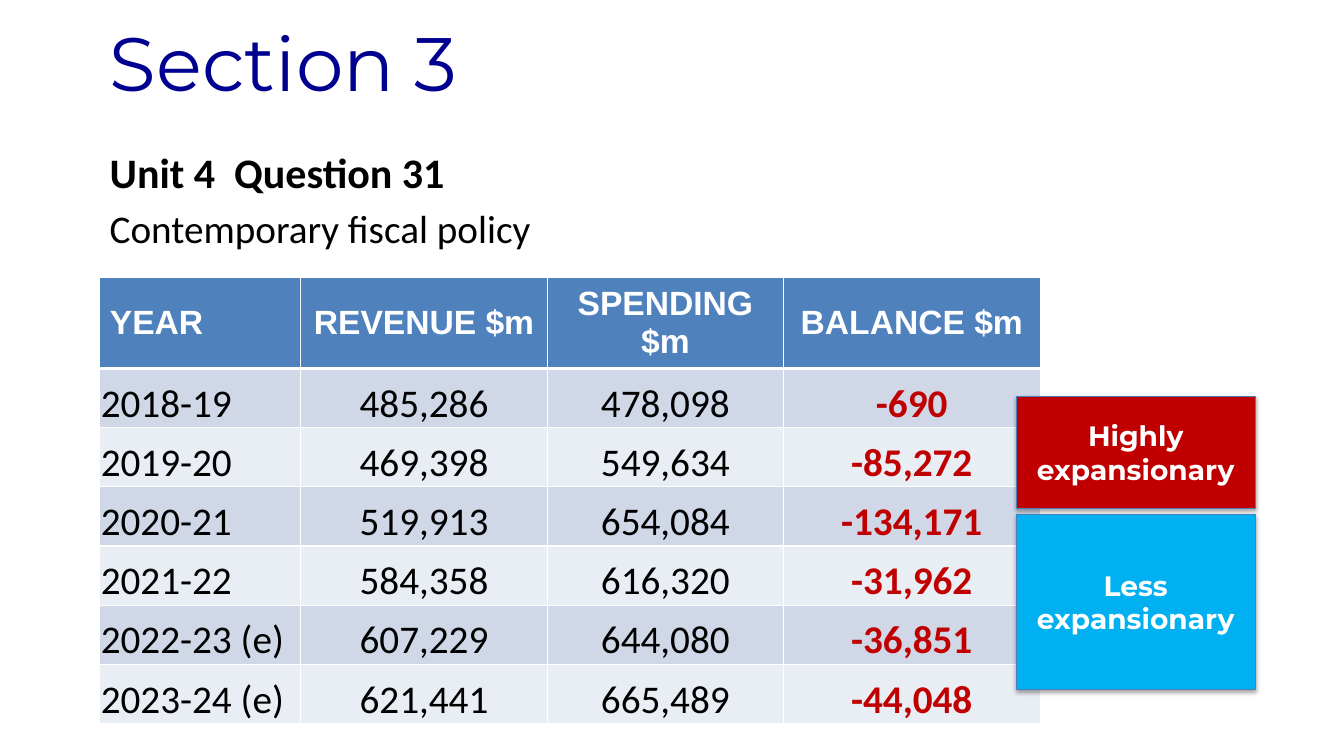
import dataclasses

import lxml.etree
import pptx
import pptx.dml.color
import pptx.enum.shapes
import pptx.enum.text
import pptx.oxml.ns
import pptx.slide
import pptx.table
import pptx.text.text
import pptx.util

Pt = pptx.util.Pt
ALIGN = pptx.enum.text.PP_ALIGN
ANCHOR = pptx.enum.text.MSO_ANCHOR

COLOURS = {
    "navy": "000090",
    "black": "000000",
    "white": "FFFFFF",
    "header": "4F81BD",
    "band_dark": "D0D8E8",
    "band_light": "E9EDF4",
    "red": "C00000",
    "sky": "00B0F0",
    "outline": "4B7EBC",
}

LEFT = 71.3
HEADINGS = ["YEAR", "REVENUE $m", "SPENDING $m", "BALANCE $m"]
BUDGETS = [
    ["2018-19", "485,286", "478,098", "-690"],
    ["2019-20", "469,398", "549,634", "-85,272"],
    ["2020-21", "519,913", "654,084", "-134,171"],
    ["2021-22", "584,358", "616,320", "-31,962"],
    ["2022-23 (e)", "607,229", "644,080", "-36,851"],
    ["2023-24 (e)", "621,441", "665,489", "-44,048"],
]
COLUMN_WIDTHS = [143.3, 176.6, 168.2, 183.8]
HEADER_HEIGHT = 41
ROW_HEIGHT = 42.3


@dataclasses.dataclass(frozen=True)
class Style:
    font: str
    size: float
    colour: str
    bold: bool = False


@dataclasses.dataclass(frozen=True)
class Stance:
    label: str
    top: float
    height: float
    fill: str


HEADING_STYLE = Style("Arial", 24, "white", True)
FIGURE_STYLE = Style("Calibri", 28, "black")
DEFICIT_STYLE = Style("Calibri", 28, "red", True)
STANCE_STYLE = Style("Montserrat", 20, "white", True)
STANCES = [
    Stance("Highly expansionary", 283, 80, "red"),
    Stance("Less expansionary", 367.2, 125.3, "sky"),
]


def rgb(name: str) -> pptx.dml.color.RGBColor:
    return pptx.dml.color.RGBColor.from_string(COLOURS[name])


def write(paragraph: pptx.text.text._Paragraph, text: str, style: Style,
          align: ALIGN = ALIGN.LEFT) -> None:
    paragraph.alignment = align
    run = paragraph.add_run()
    run.text = text
    run.font.name = style.font
    run.font.size = Pt(style.size)
    run.font.bold = style.bold
    run.font.color.rgb = rgb(style.colour)


def add_xml(parent, tag: str, **attributes: object):
    child = lxml.etree.SubElement(parent, pptx.oxml.ns.qn(tag))
    for key, value in attributes.items():
        child.set(key, str(value))
    return child


def format_cell(cell: pptx.table._Cell, fill: str, bottom: float) -> None:
    """Give the cell white borders, then its fill."""
    properties = cell._tc.get_or_add_tcPr()
    for side, width in {"L": 1, "R": 1, "T": 1, "B": bottom}.items():
        border = add_xml(properties, f"a:ln{side}", w=int(Pt(width)))
        add_xml(add_xml(border, "a:solidFill"), "a:srgbClr", val=COLOURS["white"])
    cell.fill.solid()
    cell.fill.fore_color.rgb = rgb(fill)


def add_title(slide: pptx.slide.Slide) -> None:
    title = slide.shapes.title
    title.left, title.top, title.width, title.height = map(Pt, (LEFT, 3, 733, 81.4))
    frame = title.text_frame
    frame.auto_size = pptx.enum.text.MSO_AUTO_SIZE.NONE
    frame.vertical_anchor = ANCHOR.MIDDLE
    write(frame.paragraphs[0], "Section 3", Style("Montserrat", 54, "navy"))


def add_topic(slide: pptx.slide.Slide) -> None:
    frame = slide.shapes.add_textbox(*map(Pt, (LEFT, 101, 794, 81.4))).text_frame
    frame.word_wrap = True
    write(frame.paragraphs[0], "Unit 4  Question 31", Style("Calibri", 30, "black", True))
    policy = frame.add_paragraph()
    policy.space_before = Pt(5.6)
    write(policy, "Contemporary fiscal policy", FIGURE_STYLE)


def add_budget_table(slide: pptx.slide.Slide) -> None:
    table_height = HEADER_HEIGHT + ROW_HEIGHT * len(BUDGETS)
    budget = slide.shapes.add_table(
        len(BUDGETS) + 1, len(HEADINGS),
        *map(Pt, (LEFT, 198.3, sum(COLUMN_WIDTHS), table_height))).table
    for column, width in zip(budget.columns, COLUMN_WIDTHS):
        column.width = Pt(width)

    for r, values in enumerate([HEADINGS, *BUDGETS]):
        is_header = r == 0
        budget.rows[r].height = Pt(HEADER_HEIGHT if is_header else ROW_HEIGHT)
        band = "header" if is_header else "band_dark" if r % 2 else "band_light"
        for c, value in enumerate(values):
            cell = budget.cell(r, c)
            format_cell(cell, band, 3 if is_header else 1)
            if is_header:
                style = HEADING_STYLE
                cell.vertical_anchor = ANCHOR.MIDDLE
            else:
                style = DEFICIT_STYLE if c == len(HEADINGS) - 1 else FIGURE_STYLE
                cell.vertical_anchor = ANCHOR.BOTTOM
                cell.margin_left = cell.margin_right = cell.margin_top = Pt(0.75)
                cell.margin_bottom = Pt(0)
            write(cell.text_frame.paragraphs[0], value, style,
                  ALIGN.CENTER if c else ALIGN.LEFT)


def add_stance(slide: pptx.slide.Slide, stance: Stance) -> None:
    box = slide.shapes.add_shape(
        pptx.enum.shapes.MSO_SHAPE.RECTANGLE,
        *map(Pt, (725.8, stance.top, 170.8, stance.height)))
    box.fill.solid()
    box.fill.fore_color.rgb = rgb(stance.fill)
    box.line.color.rgb = rgb("outline")
    box.line.width = Pt(0.75)

    # Soft shadow straight below
    box.shadow.inherit = False
    effects = box._element.spPr.find(pptx.oxml.ns.qn("a:effectLst"))
    shadow = add_xml(effects, "a:outerShdw", blurRad=int(Pt(3.1)), dist=int(Pt(1.8)),
                     dir=90 * 60000, rotWithShape=0)
    add_xml(add_xml(shadow, "a:srgbClr", val=COLOURS["black"]), "a:alpha", val=35000)

    frame = box.text_frame
    frame.word_wrap = True
    frame.vertical_anchor = ANCHOR.MIDDLE
    write(frame.paragraphs[0], stance.label, STANCE_STYLE, ALIGN.CENTER)


def main() -> None:
    deck = pptx.Presentation()
    deck.slide_width, deck.slide_height = Pt(960), Pt(540)
    slide = deck.slides.add_slide(deck.slide_layouts.get_by_name("Title Only"))

    # Heading and topic
    add_title(slide)
    add_topic(slide)

    # Budget figures, with the policy stance beside them
    add_budget_table(slide)
    for stance in STANCES:
        add_stance(slide, stance)

    deck.save("out.pptx")


if __name__ == "__main__":
    main()
